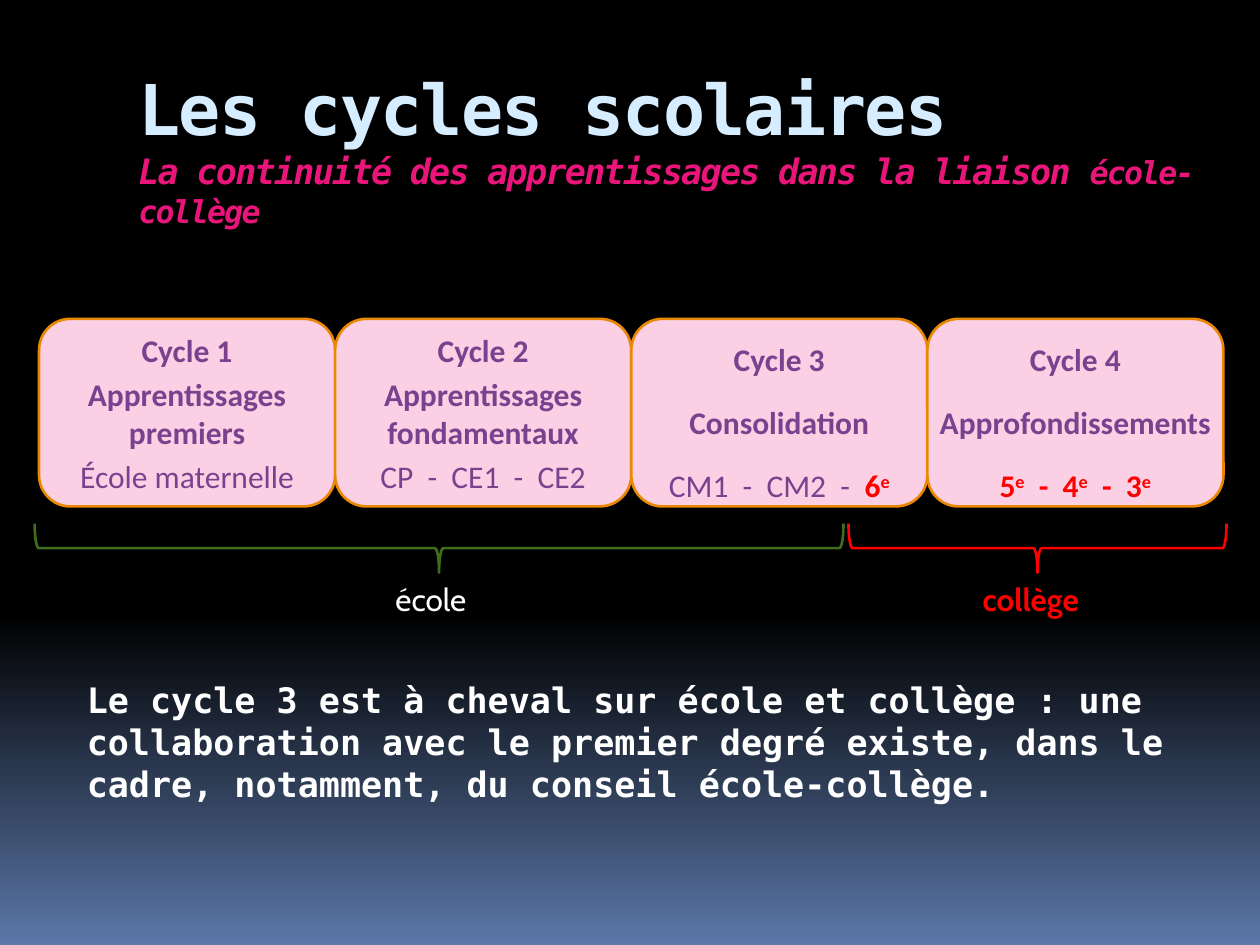
from copy import deepcopy

from pptx import Presentation
from pptx.dml.color import RGBColor
from pptx.enum.shapes import MSO_SHAPE
from pptx.enum.text import MSO_ANCHOR, PP_ALIGN
from pptx.util import Pt

ROUNDED = MSO_SHAPE.ROUNDED_RECTANGLE
BRACE = MSO_SHAPE.LEFT_BRACE
MIDDLE = MSO_ANCHOR.MIDDLE
CENTER = PP_ALIGN.CENTER

MONO, SANS, LABEL = "DejaVu Sans Mono", "Calibri", "Cabin"
WHITE, RED, PURPLE, PINK = "FFFFFF", "FF0000", "7B418E", "EA157A"

CARD_LEFT, CARD_TOP, CARD_W, CARD_H = 22.3, 182.2, 169.2, 107.2
BRACE_MIDDLE, BRACE_DEPTH = 313.2, 28.1

# Last line of each card: (text, is_college); "^" marks a superscript.
CYCLES = [
    ("Cycle 1", "Apprentissages premiers", [("École maternelle", False)]),
    ("Cycle 2", "Apprentissages fondamentaux", [("CP  -  CE1  -  CE2", False)]),
    ("Cycle 3", "Consolidation", [("CM1  -  CM2  -  ", False), ("6^e", True)]),
    ("Cycle 4", "Approfondissements", [("5^e^  -  4^e^  -  3^e", True)]),
]


def rgb(color):
    return RGBColor.from_string(color)


def set_font(font, name, size, color, bold=False, italic=False):
    font.name, font.size = name, Pt(size)
    font.color.rgb = rgb(color)
    font.bold, font.italic = bold, italic


def set_background(slide):
    fill = slide.background.fill
    fill.gradient()
    fill.gradient_angle = 270
    first, last = fill.gradient_stops
    first.color.rgb, first.position = rgb("000000"), 0
    last.color.rgb, last.position = rgb("5B77A8"), 1
    first._gs.addnext(deepcopy(first._gs))
    fill.gradient_stops[1].position = 0.65


def add_box(slide, left, top, width, height):
    tf = slide.shapes.add_textbox(Pt(left), Pt(top), Pt(width), Pt(height)).text_frame
    tf.word_wrap = True
    return tf


def add_text(slide, frame, text, font, align=None):
    p = add_box(slide, *frame).paragraphs[0]
    p.text = text
    p.alignment = align
    set_font(p.font, *font)


def add_title(slide):
    p = add_box(slide, 72, 34, 648, 84).paragraphs[0]
    parts = [
        ("Les cycles scolaires", 40, "D6ECFF", False),
        ("La continuité des apprentissages dans la liaison ", 20, PINK, True),
        ("école-collège", 18, PINK, True),
    ]
    for i, (text, size, color, italic) in enumerate(parts):
        if i == 1:
            p.add_line_break()
        r = p.add_run()
        r.text = text
        set_font(r.font, MONO, size, color, True, italic)
        r.font._element.set("spc", "-100")


def add_classes(p, parts):
    for text, is_college in parts:
        for i, piece in enumerate(text.split("^")):
            r = p.add_run()
            r.text = piece
            set_font(r.font, SANS, 18, RED if is_college else PURPLE, is_college)
            if i % 2:
                r.font._element.set("baseline", "30000")


def add_card(slide, index, name, aim, classes):
    sp = slide.shapes.add_shape(ROUNDED, Pt(CARD_LEFT + index * CARD_W), Pt(CARD_TOP),
                                Pt(CARD_W), Pt(CARD_H))
    sp.shadow.inherit = False
    sp.fill.solid()
    sp.fill.fore_color.rgb = rgb("FBD0E4")
    sp.line.color.rgb = rgb("EB8803")
    sp.line.width = Pt(1.5)
    tf = sp.text_frame
    tf.vertical_anchor = MIDDLE
    tall_lines = index >= 2
    tf.word_wrap = not tall_lines
    tf.text = f"{name}\n{aim}\n"
    for p in tf.paragraphs:
        p.alignment = CENTER
        p.space_after = Pt(3.6)
        p.line_spacing = 1.5 if tall_lines else 1.0
        set_font(p.font, SANS, 18, PURPLE, True)
    add_classes(tf.paragraphs[2], classes)


def add_brace(slide, left, width, color):
    """Draw a brace pointing down: a left brace turned about its centre."""
    sp = slide.shapes.add_shape(BRACE, Pt(left + (width - BRACE_DEPTH) / 2),
                                Pt(BRACE_MIDDLE - width / 2), Pt(BRACE_DEPTH), Pt(width))
    sp.rotation = 270
    sp.shadow.inherit = False
    sp.fill.background()
    sp.line.color.rgb = rgb(color)
    sp.line.width = Pt(1.5)


def main():
    prs = Presentation()
    prs.slide_width, prs.slide_height = Pt(720), Pt(540)
    slide = prs.slides.add_slide(prs.slide_layouts[6])
    set_background(slide)
    add_title(slide)
    for i, cycle in enumerate(CYCLES):
        add_card(slide, i, *cycle)
    add_brace(slide, 19.8, 462.2, "3F6D19")
    add_brace(slide, 484.9, 216, RED)
    add_text(slide, (212.4, 327.6, 67.7, 29), "école", (LABEL, 18, WHITE), CENTER)
    add_text(slide, (549.4, 327.6, 79.2, 29), "collège", (LABEL, 18, RED, True), CENTER)
    add_text(slide, (42.5, 384, 663, 81),
             "Le cycle 3 est à cheval sur école et collège : une collaboration avec le "
             "premier degré existe, dans le cadre, notamment, du conseil école-collège.",
             (MONO, 20, WHITE, True))
    prs.save("out.pptx")


if __name__ == "__main__":
    main()
